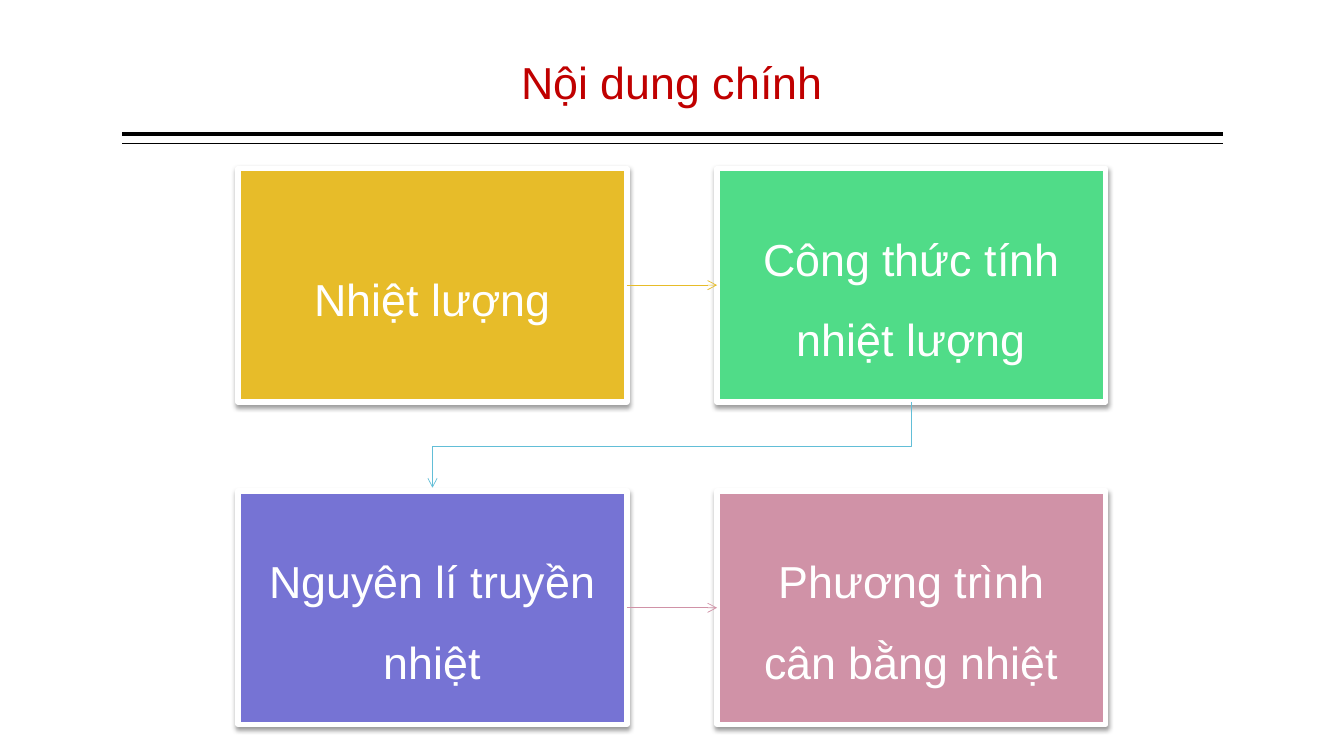
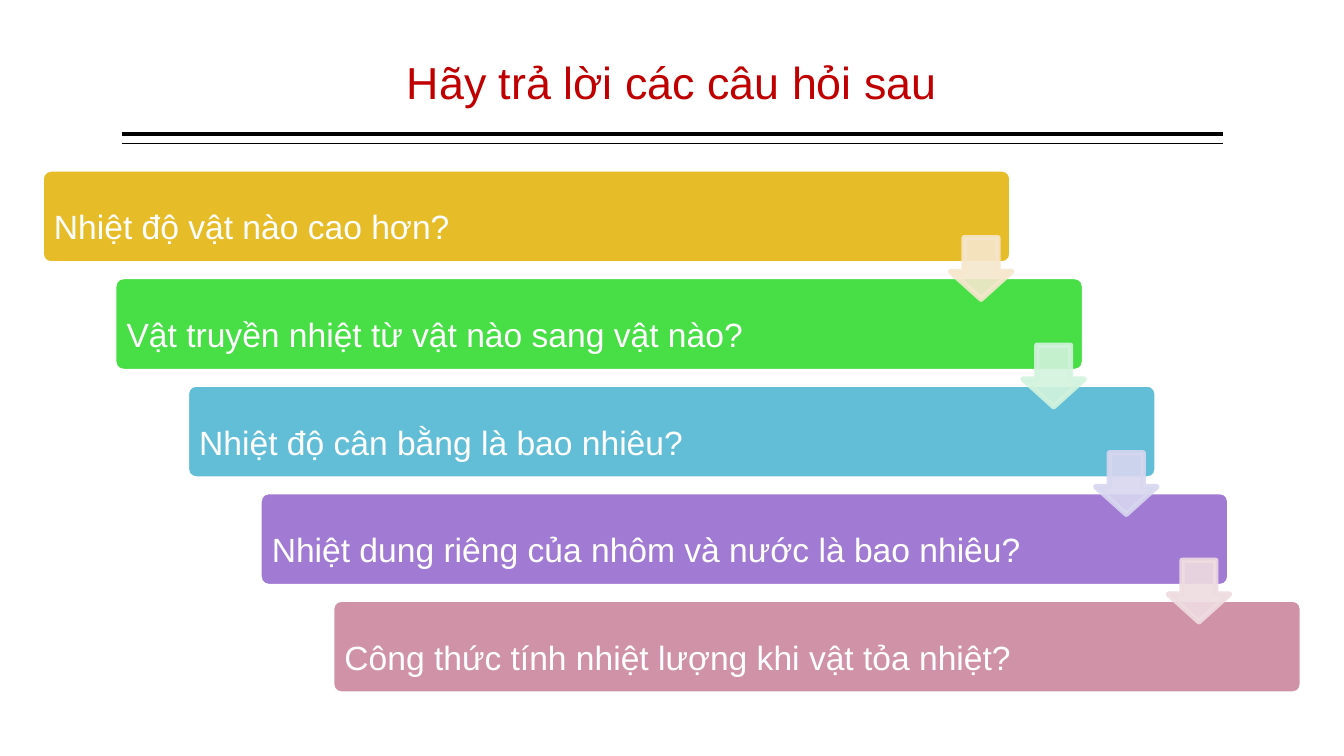
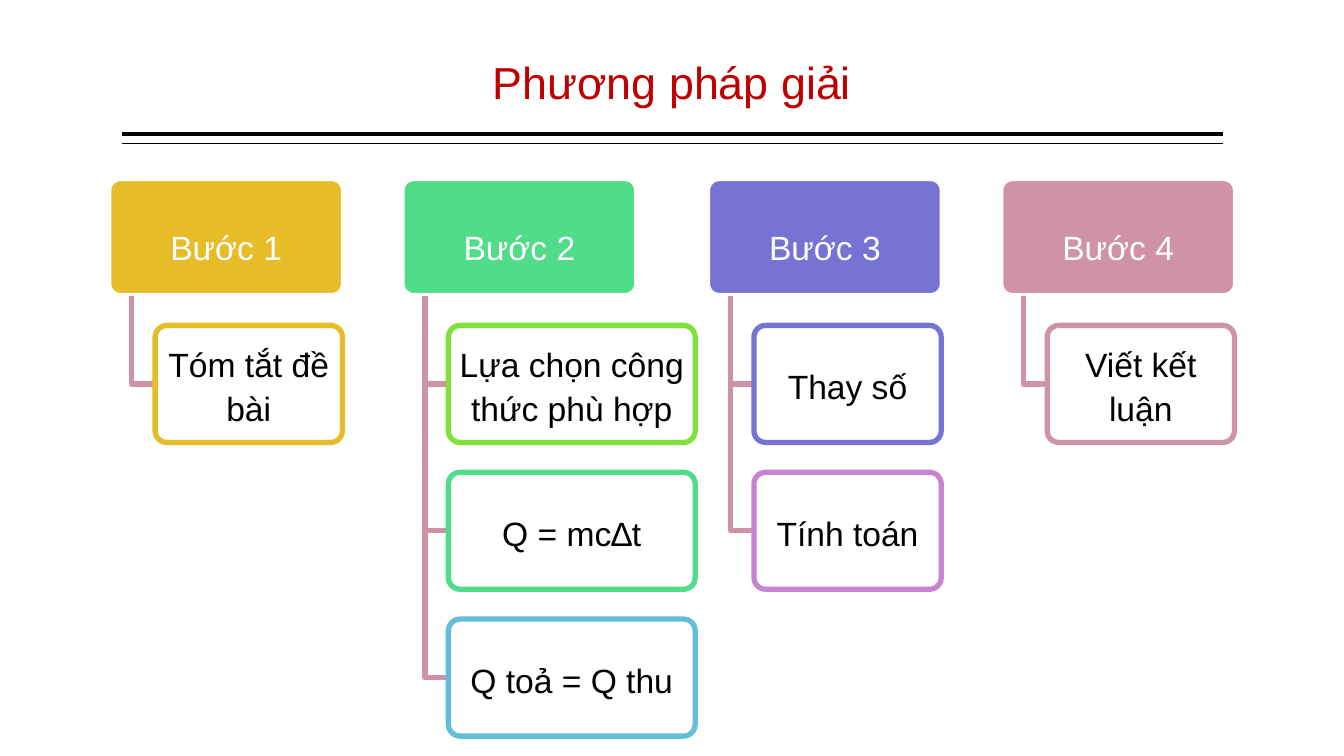
from dataclasses import dataclass

from lxml import etree
from pptx import Presentation
from pptx.dml.color import RGBColor
from pptx.enum.shapes import MSO_CONNECTOR, MSO_SHAPE
from pptx.enum.text import MSO_ANCHOR, PP_ALIGN
from pptx.oxml.ns import qn
from pptx.util import Cm, Pt

STRAIGHT = MSO_CONNECTOR.STRAIGHT
RECTANGLE = MSO_SHAPE.RECTANGLE
ROUNDED = MSO_SHAPE.ROUNDED_RECTANGLE
DOWN_ARROW = MSO_SHAPE.DOWN_ARROW
MIDDLE = MSO_ANCHOR.MIDDLE
LEFT, CENTER = PP_ALIGN.LEFT, PP_ALIGN.CENTER

WHITE = RGBColor(0xFF, 0xFF, 0xFF)
BLACK = RGBColor(0x00, 0x00, 0x00)
RED = RGBColor(0xC0, 0x00, 0x00)
GOLD = RGBColor(0xE7, 0xBC, 0x29)
MINT = RGBColor(0x50, 0xDC, 0x88)
GREEN = RGBColor(0x47, 0xDE, 0x46)
LIME = RGBColor(0x80, 0xE1, 0x3D)
SKY = RGBColor(0x62, 0xBE, 0xD7)
INDIGO = RGBColor(0x76, 0x73, 0xD4)
PURPLE = RGBColor(0xA1, 0x7B, 0xD3)
ORCHID = RGBColor(0xC5, 0x83, 0xD2)
ROSE = RGBColor(0xD0, 0x92, 0xA7)
PALE_GOLD = RGBColor(0xF6, 0xE7, 0xCD)
PALE_MINT = RGBColor(0xD2, 0xF3, 0xDD)
PALE_INDIGO = RGBColor(0xD8, 0xD7, 0xF0)
PALE_ROSE = RGBColor(0xEE, 0xDC, 0xE1)

FONT = "Arial"
BORDER = 3.78
TITLE_LEFT, TITLE_WIDTH = 3.07, 27.74


@dataclass(frozen=True)
class Box:
    left: float
    top: float
    width: float
    height: float

    @property
    def lengths(self):
        return Cm(self.left), Cm(self.top), Cm(self.width), Cm(self.height)

    @property
    def center(self) -> float:
        return self.left + self.width / 2

    @property
    def middle(self) -> float:
        return self.top + self.height / 2

    @property
    def bottom(self) -> float:
        return self.top + self.height


@dataclass(frozen=True)
class Label:
    text: str
    color: RGBColor


@dataclass(frozen=True)
class Step:
    label: Label
    left: float
    leaf_width: float
    leaves: tuple[Label, ...]


TOPICS = (
    Label("Nhiệt lượng", GOLD),
    Label("Công thức tính nhiệt lượng", MINT),
    Label("Nguyên lí truyền nhiệt", INDIGO),
    Label("Phương trình cân bằng nhiệt", ROSE),
)
QUESTIONS = (
    Label("Nhiệt độ vật nào cao hơn?", GOLD),
    Label("Vật truyền nhiệt từ vật nào sang vật nào?", GREEN),
    Label("Nhiệt độ cân bằng là bao nhiêu?", SKY),
    Label("Nhiệt dung riêng của nhôm và nước là bao nhiêu?", PURPLE),
    Label("Công thức tính nhiệt lượng khi vật tỏa nhiệt?", ROSE),
)
ARROW_COLORS = (PALE_GOLD, PALE_MINT, PALE_INDIGO, PALE_ROSE)
STEPS = (
    Step(Label("Bước 1", GOLD), 2.74, 4.72, (Label("Tóm tắt đề bài", GOLD),)),
    Step(Label("Bước 2", MINT), 10.13, 6.22, (
        Label("Lựa chọn công thức phù hợp", LIME),
        Label("Q = mc∆t", MINT),
        Label("Q toả = Q thu", SKY),
    )),
    Step(Label("Bước 3", INDIGO), 17.83, 4.72, (
        Label("Thay số", INDIGO),
        Label("Tính toán", ORCHID),
    )),
    Step(Label("Bước 4", ROSE), 25.22, 4.72, (Label("Viết kết luận", ROSE),)),
)


def write(shape, text: str, size: float, color: RGBColor, align=CENTER,
          inset_x: float = 0, inset_y: float = 0.13, spacing: float = 1.5) -> None:
    frame = shape.text_frame
    frame.word_wrap = True
    frame.vertical_anchor = MIDDLE
    frame.margin_left = frame.margin_right = Cm(inset_x)
    frame.margin_top = frame.margin_bottom = Cm(inset_y)
    frame.text = text
    paragraph = frame.paragraphs[0]
    paragraph.alignment = align
    paragraph.line_spacing = spacing
    paragraph.font.name = FONT
    paragraph.font.size = Pt(size)
    paragraph.font.color.rgb = color


def draw_shape(slide, preset, box: Box, fill: RGBColor, line: RGBColor, adjustments=()):
    shape = slide.shapes.add_shape(preset, *box.lengths)
    shape.shadow.inherit = False
    shape.fill.solid()
    shape.fill.fore_color.rgb = fill
    shape.line.color.rgb = line
    shape.line.width = Pt(BORDER)
    for index, value in enumerate(adjustments):
        shape.adjustments[index] = value
    return shape


def make_translucent(parent) -> None:
    color = parent.find(qn("a:solidFill"))[0]
    etree.SubElement(color, qn("a:alpha"), val="90000")


def add_card_shadow(shape) -> None:
    effects = shape._element.spPr.find(qn("a:effectLst"))
    shadow = etree.SubElement(effects, qn("a:outerShdw"), blurRad=str(Pt(3.5)),
                              dist=str(Pt(2)), dir="5400000", rotWithShape="0")
    color = etree.SubElement(shadow, qn("a:srgbClr"), val="000000")
    etree.SubElement(color, qn("a:alpha"), val="38000")


def add_arrowhead(shape) -> None:
    line = shape._element.spPr.find(qn("a:ln"))
    etree.SubElement(line, qn("a:tailEnd"), type="arrow")


def draw_line(slide, start, end, color: RGBColor, width: float):
    line = slide.shapes.add_connector(STRAIGHT, *(Cm(value) for value in (*start, *end)))
    line.line.color.rgb = color
    line.line.width = Pt(width)
    etree.SubElement(line._element.spPr, qn("a:effectLst"))
    return line


def draw_path(slide, points, color: RGBColor, width: float):
    start, *others = [(Cm(x), Cm(y)) for x, y in points]
    builder = slide.shapes.build_freeform(*start)
    builder.add_line_segments(others, close=False)
    path = builder.convert_to_shape()
    path.shadow.inherit = False
    path.fill.background()
    path.line.color.rgb = color
    path.line.width = Pt(width)
    return path


def add_titled_slide(presentation, title: str):
    slide = presentation.slides.add_slide(presentation.slide_layouts[6])
    for y, width in ((3.38, 3), (3.62, 1)):
        draw_line(slide, (TITLE_LEFT + TITLE_WIDTH, y), (TITLE_LEFT, y), BLACK, width)
    title_box = slide.shapes.add_textbox(*Box(TITLE_LEFT, 0.2, TITLE_WIDTH, 3.05).lengths)
    write(title_box, title, 32, RED)
    return slide


def build_contents(presentation) -> None:
    slide = add_titled_slide(presentation, "Nội dung chính")
    boxes = [Box(6 + 12.07 * (index % 2), 4.24 + 8.13 * (index // 2), 9.8, 5.89)
             for index in range(len(TOPICS))]
    cards = []
    for topic, box in zip(TOPICS, boxes):
        card = draw_shape(slide, RECTANGLE, box, topic.color, WHITE)
        add_card_shadow(card)
        write(card, topic.text, 32, WHITE, inset_x=0.64, inset_y=0.64)
        cards.append(card)
    for first, color in ((0, GOLD), (2, ROSE)):
        arrow = draw_line(slide, (0, 0), (0, 0), color, 0.5)
        arrow.begin_connect(cards[first], 3)
        arrow.end_connect(cards[first + 1], 1)
        add_arrowhead(arrow)
    upper, lower = boxes[1], boxes[2]
    turn = (upper.bottom + lower.top) / 2
    elbow = draw_path(slide, ((upper.center, upper.bottom), (upper.center, turn),
                              (lower.center, turn), (lower.center, lower.top - 0.08)), SKY, 0.5)
    add_arrowhead(elbow)


def build_questions(presentation) -> None:
    slide = add_titled_slide(presentation, "Hãy trả lời các câu hỏi sau")
    boxes = [Box(1.04 + 1.83 * index, 4.26 + 2.71 * index, 24.46, 2.39)
             for index in range(len(QUESTIONS))]
    for question, box in zip(QUESTIONS, boxes):
        bar = draw_shape(slide, ROUNDED, box, question.color, WHITE, (0.1,))
        write(bar, question.text, 24, WHITE, LEFT, 0.25, 0.25)
    side = 1.55
    for color, box in zip(ARROW_COLORS, boxes):
        place = Box(box.left + box.width - side, box.top + 1.73, side, side)
        arrow = draw_shape(slide, DOWN_ARROW, place, color, color, (0.55, 0.45))
        properties = arrow._element.spPr
        make_translucent(properties)
        make_translucent(properties.find(qn("a:ln")))


def build_method(presentation) -> None:
    slide = add_titled_slide(presentation, "Phương pháp giải")
    top, height, pitch = 4.5, 2.95, 3.7
    for step in STEPS:
        head_box = Box(step.left, top, 5.92, height)
        head = draw_shape(slide, ROUNDED, head_box, step.label.color, WHITE, (0.1,))
        write(head, step.label.text, 24, WHITE, inset_x=0.13, inset_y=0.08)
        trunk = step.left + 0.58
        for row, label in enumerate(step.leaves, start=1):
            box = Box(step.left + 1.17, top + pitch * row, step.leaf_width, height)
            draw_path(slide, ((trunk, head_box.bottom), (trunk, box.middle),
                              (box.left, box.middle)), ROSE, BORDER)
            leaf = draw_shape(slide, ROUNDED, box, WHITE, label.color, (0.1,))
            make_translucent(leaf._element.spPr)
            write(leaf, label.text, 24, BLACK, inset_x=0.13, inset_y=0.08, spacing=1.1)


def main() -> None:
    presentation = Presentation()
    presentation.slide_width = Cm(33.87)
    presentation.slide_height = Cm(19.05)
    build_contents(presentation)
    build_questions(presentation)
    build_method(presentation)
    presentation.save("out.pptx")


if __name__ == "__main__":
    main()
